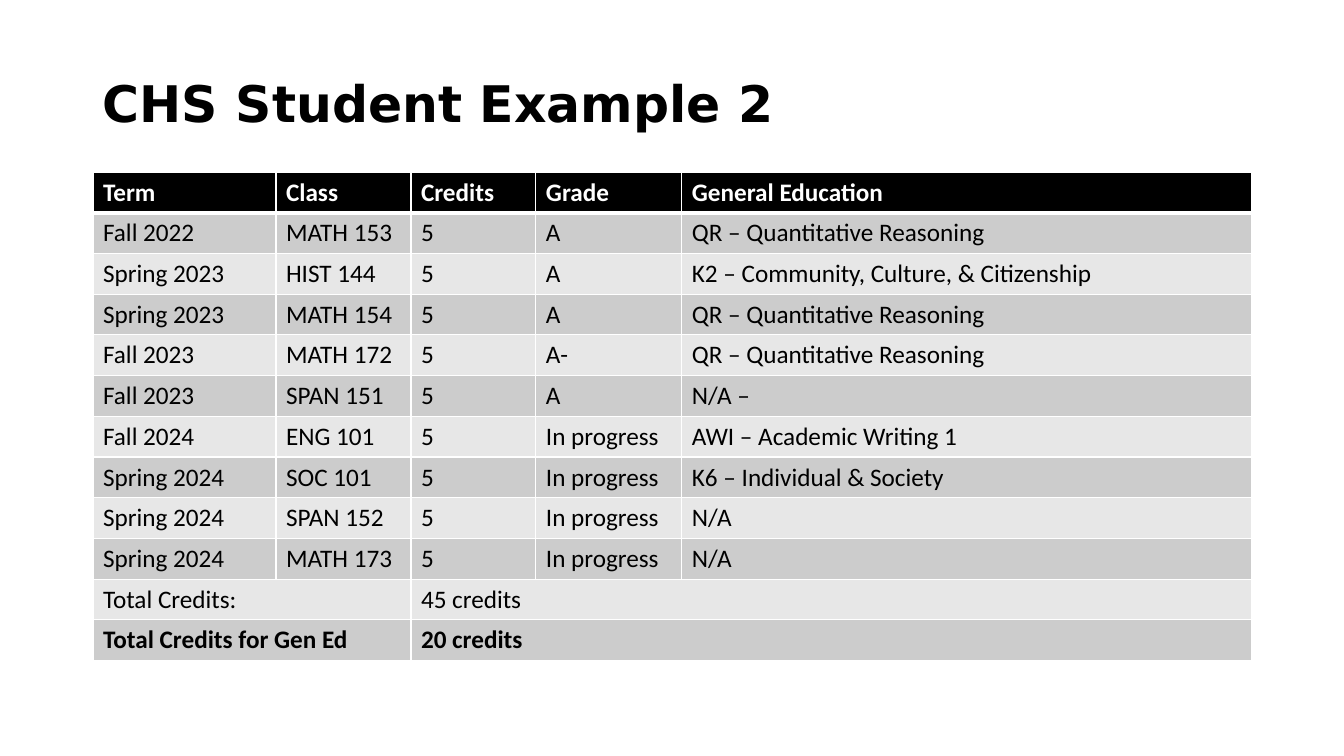
from lxml.etree import SubElement
from pptx import Presentation
from pptx.dml.color import RGBColor
from pptx.enum.text import MSO_ANCHOR
from pptx.oxml.ns import qn
from pptx.util import Pt

# Content
TITLE = "CHS Student Example 2"
HEADER = ("Term", "Class", "Credits", "Grade", "General Education")
COURSES = [
    ("Fall 2022", "MATH 153", "5", "A", "QR – Quantitative Reasoning"),
    ("Spring 2023", "HIST 144", "5", "A", "K2 – Community, Culture, & Citizenship"),
    ("Spring 2023", "MATH 154", "5", "A", "QR – Quantitative Reasoning"),
    ("Fall 2023", "MATH 172", "5", "A-", "QR – Quantitative Reasoning"),
    ("Fall 2023", "SPAN 151", "5", "A", "N/A –"),
    ("Fall 2024", "ENG 101", "5", "In progress", "AWI – Academic Writing 1"),
    ("Spring 2024", "SOC 101", "5", "In progress", "K6 – Individual & Society"),
    ("Spring 2024", "SPAN 152", "5", "In progress", "N/A"),
    ("Spring 2024", "MATH 173", "5", "In progress", "N/A"),
]
TOTALS = [
    ("Total Credits:", "45 credits"),
    ("Total Credits for Gen Ed", "20 credits"),
]

# Look
COLORS = {"black": "000000", "white": "FFFFFF", "dark band": "CCCCCC", "light band": "E7E7E7"}
TITLE_FONT, TABLE_FONT = "DejaVu Sans", "Calibri"

# Lengths in px
SLIDE_SIZE = (1344, 756)
LEFT, WIDTH = 93, 1159
TITLE_TOP, TITLE_HEIGHT = 40, 132
TABLE_TOP, TABLE_HEIGHT = 172, 489
COLUMN_WIDTHS = (183, 135, 125, 146, 570)
TOTAL_LABEL_COLUMNS = 2


def px(length):
    return round(length * 914400 / 100.8)


def color(name):
    return RGBColor.from_string(COLORS[name])


def set_font(paragraph, name, size, color_name, bold):
    font = paragraph.font
    font.name, font.size, font.bold = name, Pt(size), bold
    font.color.rgb = color(color_name)


def set_borders(cell, top, bottom):
    properties = cell._tc.get_or_add_tcPr()
    for side, width in (("L", 1), ("R", 1), ("T", top), ("B", bottom)):
        line = SubElement(properties, qn(f"a:ln{side}"), w=str(Pt(width)))
        fill = SubElement(line, qn("a:solidFill"))
        SubElement(fill, qn("a:srgbClr"), val=COLORS["white"])


presentation = Presentation()
presentation.slide_width, presentation.slide_height = map(px, SLIDE_SIZE)
slide = presentation.slides.add_slide(presentation.slide_layouts[6])

# Title
title_box = slide.shapes.add_textbox(px(LEFT), px(TITLE_TOP), px(WIDTH), px(TITLE_HEIGHT))
title_frame = title_box.text_frame
title_frame.word_wrap = True
title_frame.vertical_anchor = MSO_ANCHOR.MIDDLE
title_paragraph = title_frame.paragraphs[0]
title_paragraph.text = TITLE
title_paragraph.line_spacing = 0.9
set_font(title_paragraph, TITLE_FONT, 36, "black", True)

# Table grid
total_rows = [(label, "", value, "", "") for label, value in TOTALS]
rows = [HEADER, *COURSES, *total_rows]
table = slide.shapes.add_table(
    len(rows), len(HEADER), px(LEFT), px(TABLE_TOP), px(WIDTH), px(TABLE_HEIGHT)
).table
table.first_row = True
table.horz_banding = False
for column, width in zip(table.columns, COLUMN_WIDTHS):
    column.width = px(width)

# Table cells
last_row, last_column = len(rows) - 1, len(HEADER) - 1
for row_index, texts in enumerate(rows):
    is_header = row_index == 0
    band = "black" if is_header else "dark band" if row_index % 2 else "light band"
    for column_index, text in enumerate(texts):
        cell = table.cell(row_index, column_index)
        set_borders(cell, 3 if row_index == 1 else 1, 3 if is_header else 1)
        cell.fill.solid()
        cell.fill.fore_color.rgb = color(band)
        paragraph = cell.text_frame.paragraphs[0]
        paragraph.text = text
        set_font(paragraph, TABLE_FONT, 18, "white" if is_header else "black",
                 is_header or row_index == last_row)

# Merged cells of the totals
for row_index in range(len(rows) - len(TOTALS), len(rows)):
    table.cell(row_index, 0).merge(table.cell(row_index, TOTAL_LABEL_COLUMNS - 1))
    table.cell(row_index, TOTAL_LABEL_COLUMNS).merge(table.cell(row_index, last_column))

presentation.save("out.pptx")
